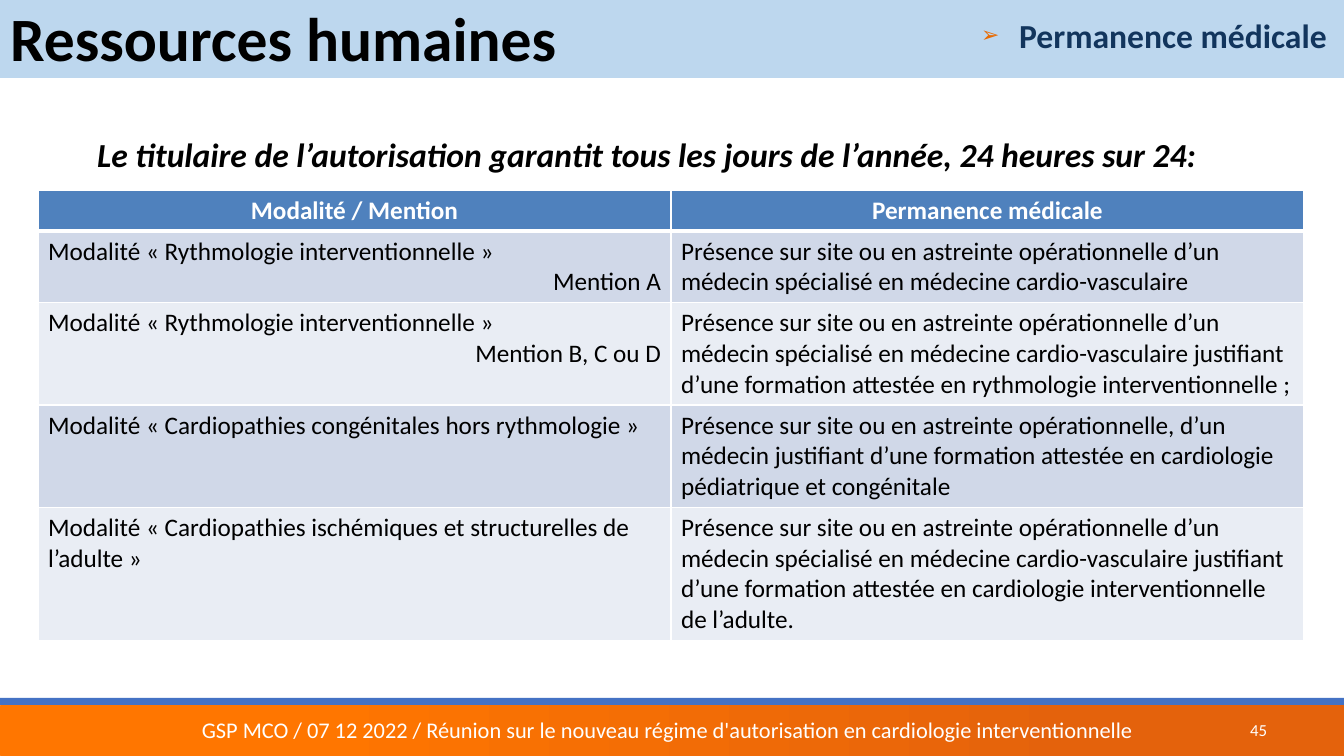
from lxml.etree import SubElement
from pptx import Presentation
from pptx.dml.color import RGBColor
from pptx.enum.shapes import MSO_SHAPE
from pptx.enum.text import MSO_ANCHOR, MSO_AUTO_SIZE, PP_ALIGN
from pptx.oxml.ns import qn
from pptx.util import Pt

SCALE = 914400 / 100.8
FONT = "Calibri"
BLACK = RGBColor(0, 0, 0)
WHITE = RGBColor(255, 255, 255)
NAVY = RGBColor(0x12, 0x35, 0x5D)
ORANGE = RGBColor(0xFF, 0x76, 0x00)
DARK_ORANGE = RGBColor(0xE4, 0x62, 0x0C)
BULLET_ORANGE = RGBColor(0xE9, 0x6A, 0x00)
BLUE = RGBColor(0x44, 0x72, 0xC4)
PALE_BLUE = RGBColor(0xBD, 0xD7, 0xEE)
HEADER_BLUE = RGBColor(0x4F, 0x81, 0xBD)
BANDS = [RGBColor(0xD0, 0xD8, 0xE8), RGBColor(0xE9, 0xED, 0xF4)]

HEADINGS = ["Modalité / Mention", "Permanence médicale"]
RULES = [
    (["Modalité « Rythmologie interventionnelle »", "Mention A"],
     ["Présence sur site ou en astreinte opérationnelle d’un médecin spécialisé "
      "en médecine cardio-vasculaire"]),
    (["Modalité « Rythmologie interventionnelle »", "Mention B, C ou D"],
     ["Présence sur site ou en astreinte opérationnelle d’un médecin spécialisé "
      "en médecine cardio-vasculaire justifiant d’une formation attestée en "
      "rythmologie interventionnelle ;"]),
    (["Modalité « Cardiopathies congénitales hors rythmologie »"],
     ["Présence sur site ou en astreinte opérationnelle, d’un médecin justifiant "
      "d’une formation attestée en cardiologie pédiatrique et congénitale"]),
    (["Modalité « Cardiopathies ischémiques et structurelles de l’adulte »"],
     ["Présence sur site ou en astreinte opérationnelle d’un médecin spécialisé "
      "en médecine cardio-vasculaire justifiant d’une formation attestée en "
      "cardiologie interventionnelle de l’adulte."]),
]
ROW_HEIGHTS = [41, 70, 101, 101, 131]


def px(n):
    return round(n * SCALE)


def place(sp, x, y, w, h):
    sp.left, sp.top, sp.width, sp.height = px(x), px(y), px(w), px(h)


def add_run(p, text, size, color, bold=False, italic=False):
    r = p.add_run()
    r.text = text
    f = r.font
    f.name, f.size, f.bold, f.italic = FONT, Pt(size), bold, italic
    f.color.rgb = color


def add_band(s, x, y, w, h, color, kind=MSO_SHAPE.RECTANGLE):
    sp = s.shapes.add_shape(kind, px(x), px(y), px(w), px(h))
    sp.shadow.inherit = False
    sp.fill.solid()
    sp.fill.fore_color.rgb = color
    sp.line.fill.background()
    return sp


def add_label(s, x, y, w, h, text, size, color, align, **style):
    sp = s.shapes.add_textbox(px(x), px(y), px(w), px(h))
    tf = sp.text_frame
    tf.word_wrap = True
    tf.vertical_anchor = MSO_ANCHOR.MIDDLE
    p = tf.paragraphs[0]
    p.alignment = align
    add_run(p, text, size, color, **style)


def add_bullet(p, indent, hanging):
    pPr = p._p.get_or_add_pPr()
    pPr.set("marL", str(px(indent)))
    pPr.set("indent", str(-px(hanging)))
    clr = SubElement(pPr, qn("a:buClr"))
    SubElement(clr, qn("a:srgbClr"), val=str(BULLET_ORANGE))
    SubElement(pPr, qn("a:buSzPct"), val="65000")
    SubElement(pPr, qn("a:buChar"), char="➢")


def add_header(s, x, y, w, h):
    add_band(s, x, y, w, h, PALE_BLUE)
    title, body = s.shapes.title, s.placeholders[1]
    for sp in (title, body):
        sp.element.getparent().append(sp.element)
        sp.text_frame.auto_size = MSO_AUTO_SIZE.NONE
        sp.text_frame.word_wrap = True

    place(title, x, y, w - 106, h - 3)
    title.text_frame.vertical_anchor = MSO_ANCHOR.MIDDLE
    p = title.text_frame.paragraphs[0]
    p.alignment = PP_ALIGN.LEFT
    add_run(p, "Ressources humaines", 44, BLACK, bold=True)

    place(body, x + 495, y + 11, w - 502, 99)
    body.text_frame.vertical_anchor = MSO_ANCHOR.TOP
    p = body.text_frame.paragraphs[0]
    p.level = 1
    p.alignment = PP_ALIGN.RIGHT
    p.space_before = Pt(12)
    add_bullet(p, 70, 38)
    add_run(p, "Permanence médicale", 24, NAVY, bold=True)


def add_footer(s, x, y, w, h):
    strip = 7
    bar = add_band(s, x, y + strip, w, h - strip, ORANGE, MSO_SHAPE.ROUNDED_RECTANGLE)
    bar.adjustments[0] = 0.02
    bar.fill.gradient()
    bar.fill.gradient_angle = 0
    stops = [(0.23, ORANGE), (0.81, DARK_ORANGE)]
    for stop, (position, color) in zip(bar.fill.gradient_stops, stops):
        stop.position = position
        stop.color.rgb = color
    add_band(s, x, y, w, strip, BLUE)
    add_label(s, x + 192, y + 12, 966, 39,
              "GSP MCO / 07 12 2022 / Réunion sur le nouveau régime d'autorisation "
              "en cardiologie interventionnelle", 16, WHITE, PP_ALIGN.LEFT)
    add_label(s, x + 1116, y + 18, 161, 27, "45", 12, WHITE, PP_ALIGN.RIGHT)


def add_borders(cell, top, bottom):
    tcPr = cell._tc.get_or_add_tcPr()
    for side, width in (("L", 1), ("R", 1), ("T", top), ("B", bottom)):
        ln = SubElement(tcPr, qn(f"a:ln{side}"), w=str(Pt(width)))
        fill = SubElement(ln, qn("a:solidFill"))
        SubElement(fill, qn("a:srgbClr"), val=str(WHITE))


def fill_cell(cell, lines, row):
    header = row == 0
    add_borders(cell, 3 if row == 1 else 1, 3 if header else 1)
    cell.fill.solid()
    cell.fill.fore_color.rgb = HEADER_BLUE if header else BANDS[(row - 1) % 2]
    tf = cell.text_frame
    for i, line in enumerate(lines):
        p = tf.add_paragraph() if i else tf.paragraphs[0]
        p.alignment = PP_ALIGN.CENTER if header else PP_ALIGN.RIGHT if i else PP_ALIGN.LEFT
        add_run(p, line, 18, WHITE if header else BLACK, bold=header)


def add_rules_table(s, x, y, w):
    rows = [[[heading] for heading in HEADINGS], *RULES]
    frame = s.shapes.add_table(len(rows), len(HEADINGS), px(x), px(y), px(w),
                               px(sum(ROW_HEIGHTS)))
    table = frame.table
    for col in table.columns:
        col.width = px(w / len(HEADINGS))
    for i, (row, height) in enumerate(zip(rows, ROW_HEIGHTS)):
        table.rows[i].height = px(height)
        for j, lines in enumerate(row):
            fill_cell(table.cell(i, j), lines, i)


def main():
    prs = Presentation()
    prs.slide_width, prs.slide_height = px(1344), px(756)
    s = prs.slides.add_slide(prs.slide_layouts[1])
    add_footer(s, 0, 698, 1344, 58)
    add_header(s, 0, -1, 1344, 79)
    add_rules_table(s, 38, 190, 1266)
    add_label(s, 58, 129, 1178, 50,
              "Le titulaire de l’autorisation garantit tous les jours de l’année, "
              "24 heures sur 24:", 24, BLACK, PP_ALIGN.CENTER, bold=True, italic=True)
    prs.save("out.pptx")


if __name__ == "__main__":
    main()
